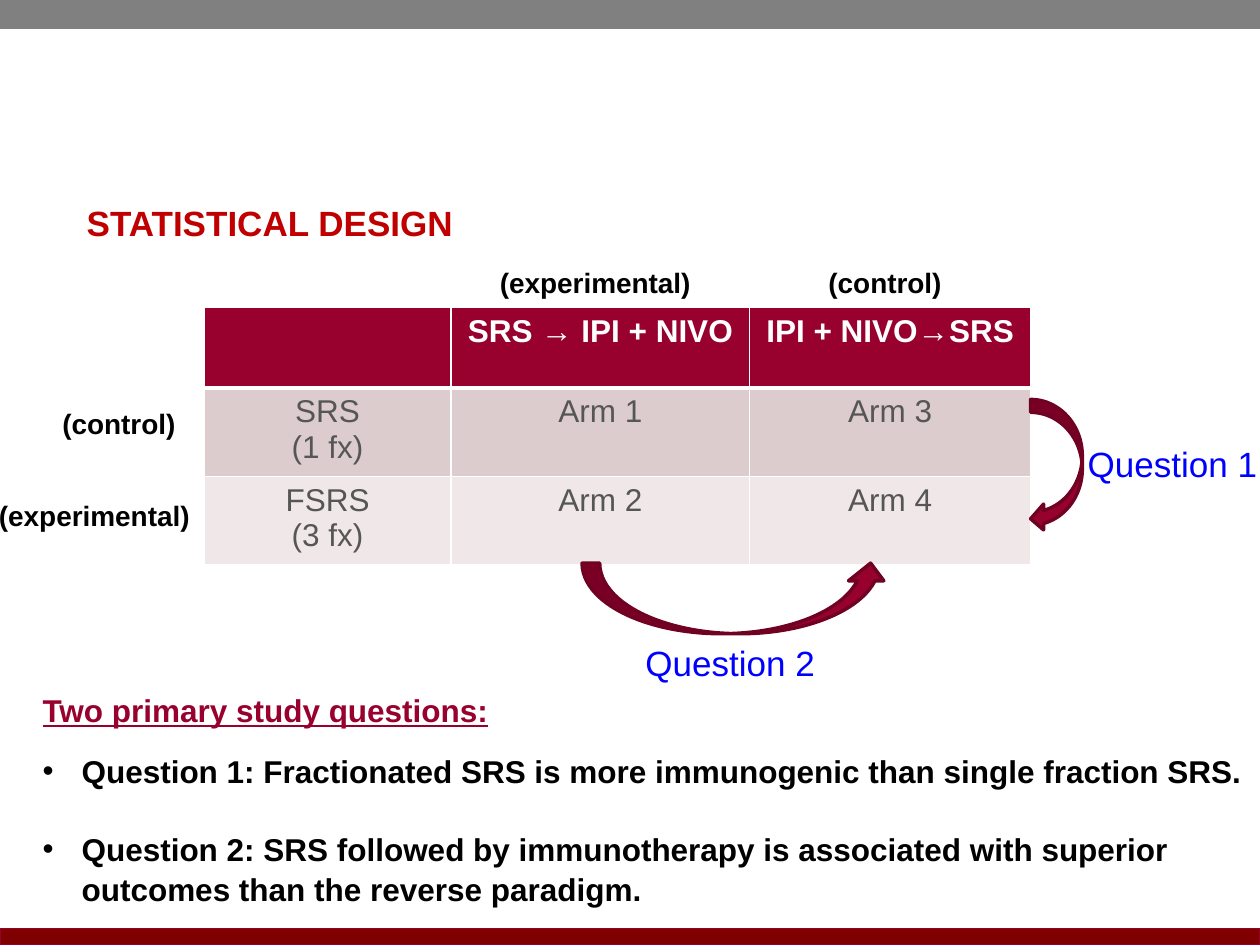
from dataclasses import dataclass

from lxml import etree
from pptx import Presentation
from pptx.dml.color import RGBColor
from pptx.enum import shapes, text
from pptx.oxml import ns
from pptx.util import Pt

PX = 9144  # EMU per px, 100 px to the inch
MID = text.PP_ALIGN.CENTER
SHAPE = shapes.MSO_SHAPE


@dataclass(frozen=True)
class Theme:
    face: str = "Arial"
    white: str = "FFFFFF"
    black: str = "000000"
    gray: str = "808080"
    foot: str = "800000"
    edge: str = "96002D"
    wine: str = "98012E"
    dark: str = "700122"
    red: str = "C00000"
    blue: str = "0000FF"
    ink: str = "565656"
    rows: tuple = ("98012E", "DDCCCD", "EFE7E8")
    large: int = 20
    body: int = 18
    small: int = 16


T = Theme()


def emu(*sizes):
    return [n * PX for n in sizes]


def style(para, size, color, bold=False, align=None):
    font = para.font
    font.name, font.size, font.bold = T.face, Pt(size), bold
    font.color.rgb = RGBColor.from_string(color)
    para.alignment = align


def form(slide, kind, box, fill, line=None, width=1):
    part = slide.shapes.add_shape(kind, *emu(*box))
    part.shadow.inherit = False
    part.fill.solid()
    part.fill.fore_color.rgb = RGBColor.from_string(fill)
    if line:
        part.line.color.rgb = RGBColor.from_string(line)
        part.line.width = Pt(width)
    else:
        part.line.fill.background()


def frame(slide, box):
    area = slide.shapes.add_textbox(*emu(*box)).text_frame
    area.word_wrap = True
    return area


def label(slide, box, words, size, color, bold=False, align=MID):
    para = frame(slide, box).paragraphs[0]
    para.text = words
    style(para, size, color, bold, align)


def border(cell, top, base):
    props = cell._tc.get_or_add_tcPr()
    sides = (("lnL", 1), ("lnR", 1), ("lnT", top), ("lnB", base))
    for spot, (side, width) in enumerate(sides):
        line = etree.Element(ns.qn("a:" + side), w=str(Pt(width)))
        fill = etree.SubElement(line, ns.qn("a:solidFill"))
        etree.SubElement(fill, ns.qn("a:srgbClr"), val=T.white)
        props.insert(spot, line)


def bullet(para, indent):
    props = para._p.get_or_add_pPr()
    props.set("marL", str(indent * PX))
    props.set("indent", str(-indent * PX))
    etree.SubElement(props, ns.qn("a:buFont"), typeface=T.face)
    etree.SubElement(props, ns.qn("a:buChar"), char="•")


def bands(slide, wide, high):
    form(slide, SHAPE.RECTANGLE, (0, 0, wide, 23), T.gray)
    form(slide, SHAPE.RECTANGLE, (0, high - 13, wide, 13), T.foot, T.edge, 0.75)


def arms(slide, x, y):
    cols, rows = (196, 237, 223), (64, 70, 70)
    data = (
        ("", "SRS → IPI + NIVO", "IPI + NIVO→SRS"),
        ("SRS\n(1 fx)", "Arm 1", "Arm 3"),
        ("FSRS\n(3 fx)", "Arm 2", "Arm 4"),
    )
    # Table
    grid = slide.shapes.add_table(
        3, 3, *emu(x, y, sum(cols), sum(rows))).table
    for col, wide in zip(grid.columns, cols):
        col.width = wide * PX
    for r, line in enumerate(data):
        grid.rows[r].height = rows[r] * PX
        for c, words in enumerate(line):
            cell = grid.cell(r, c)
            cell.text = words
            cell.fill.solid()
            cell.fill.fore_color.rgb = RGBColor.from_string(T.rows[r])
            border(cell, 3 if r == 1 else 1, 3 if r == 0 else 1)
            for para in cell.text_frame.paragraphs:
                style(para, T.body, T.ink if r else T.white, r == 0, MID)
    # Arrows that compare the arms
    for kind, dx, dy, wide, high in (
        (SHAPE.CURVED_LEFT_ARROW, 656, 73, 41, 105),
        (SHAPE.CURVED_UP_ARROW, 300, 203, 243, 56),
    ):
        form(slide, kind, (x + dx, y + dy, wide, high), T.wine, T.dark, 2)
    # Questions beside the arrows
    for words, dx, dy, wide in (
        ("Question 2", 303, 260, 229),
        ("Question 1", 681, 102, 175),
    ):
        label(slide, (x + dx, y + dy, wide, 44), words, T.large, T.blue)
    # Row and column roles
    for words, dx, dy, wide in (
        ("(control) ", -138, 74, 147),
        ("(experimental) ", 199, -38, 229),
        ("(experimental) ", -182, 147, 196),
        ("(control) ", 470, -38, 147),
    ):
        label(slide, (x + dx, y + dy, wide, 37), words, T.small, T.black, True)


def study(slide, box):
    area = frame(slide, box)
    # Heading
    head = area.paragraphs[0]
    head.text = "Two primary study questions:"
    style(head, T.body, T.wine, True)
    head.font.underline = True
    head.space_after = Pt(12)
    head.line_spacing = 1.05
    # Bulleted questions
    for words, gap in (
        ("Question 1: Fractionated SRS is more immunogenic than single "
         "fraction SRS.", 0),
        ("Question 2: SRS followed by immunotherapy is associated with "
         "superior outcomes than the reverse paradigm.", 22),
    ):
        para = area.add_paragraph()
        para.text = words
        bullet(para, 31)
        style(para, T.body, T.black, True)
        para.space_before = Pt(gap)
        para.line_spacing = 1.05


def main():
    deck = Presentation()
    deck.slide_width, deck.slide_height = emu(1000, 750)
    slide = deck.slides.add_slide(deck.slide_layouts[6])
    bands(slide, 1000, 750)
    arms(slide, 162, 244)
    study(slide, (24, 542, 976, 148))
    label(slide, (59, 155, 357, 44), "STATISTICAL DESIGN",
          T.large, T.red, True, None)
    deck.save("out.pptx")


if __name__ == "__main__":
    main()
